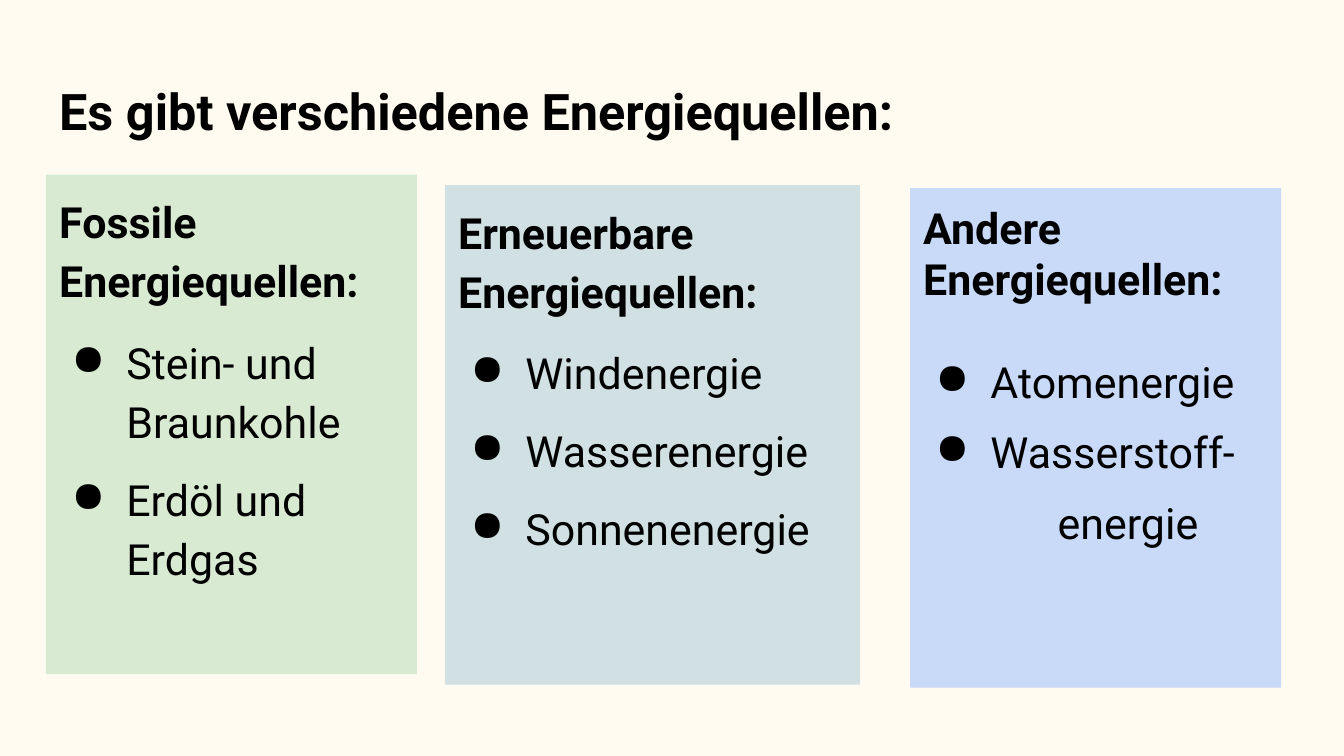
import pptx
import pptx.dml.color
import pptx.enum.shapes
import pptx.enum.text
import pptx.oxml.ns
import pptx.util
from dataclasses import dataclass
from lxml import etree

Pt = pptx.util.Pt
RGB = pptx.dml.color.RGBColor.from_string


@dataclass(frozen=True)
class Theme:
    font: str = "Roboto"
    text: str = "000000"
    background: str = "FFFBF0"
    fossil: str = "D9EAD3"
    renewable: str = "D0E0E3"
    other: str = "C9DAF8"
    title_size: float = 27
    body_size: float = 23
    inset: float = 7.2
    indent: float = 36
    hanging: float = -29.5


class SlideBuilder:
    def __init__(self, slide, theme):
        self.slide = slide
        self.theme = theme
        fill = slide.background.fill
        fill.solid()
        fill.fore_color.rgb = RGB(theme.background)

    def frame(self, sp):
        tf = sp.text_frame
        tf.word_wrap = True
        tf.vertical_anchor = pptx.enum.text.MSO_ANCHOR.TOP
        tf.margin_left = tf.margin_right = Pt(self.theme.inset)
        tf.margin_top = tf.margin_bottom = Pt(self.theme.inset)
        return tf

    def paragraph(self, p, text, size, bold=False, line=1.0, before=0):
        p.text = text
        p.alignment = pptx.enum.text.PP_ALIGN.LEFT
        p.line_spacing = line
        p.space_before = Pt(before)
        p.font.name, p.font.size, p.font.bold = self.theme.font, Pt(size), bold
        p.font.color.rgb = RGB(self.theme.text)

    def indent(self, p, left, first):
        pPr = p._p.get_or_add_pPr()
        pPr.set("marL", str(int(Pt(left))))
        pPr.set("indent", str(int(Pt(first))))
        return pPr

    def bullet(self, p):
        pPr = self.indent(p, self.theme.indent, self.theme.hanging)
        qn = pptx.oxml.ns.qn
        color = etree.Element(qn("a:buClr"))
        etree.SubElement(color, qn("a:srgbClr")).set("val", self.theme.text)
        char = etree.Element(qn("a:buChar"))
        char.set("char", "●")
        defaults = pPr.find(qn("a:defRPr"))
        defaults.addprevious(color)
        defaults.addprevious(char)

    def title(self, text, left, top, width, height):
        sp = self.slide.shapes.add_textbox(Pt(left), Pt(top), Pt(width), Pt(height))
        self.paragraph(self.frame(sp).paragraphs[0], text, self.theme.title_size, bold=True)

    def card(self, heading, items, color, left, top, width, height,
             line=1.15, gap=12, continuation=None):
        sp = self.slide.shapes.add_shape(
            pptx.enum.shapes.MSO_SHAPE.RECTANGLE, Pt(left), Pt(top), Pt(width), Pt(height))
        sp.shadow.inherit = False
        sp.fill.solid()
        sp.fill.fore_color.rgb = RGB(color)
        sp.line.fill.background()
        tf = self.frame(sp)
        size = self.theme.body_size
        self.paragraph(tf.paragraphs[0], heading, size, bold=True, line=line)
        for i, item in enumerate(items):
            p = tf.add_paragraph()
            self.paragraph(p, item, size, line=line, before=10 if i else gap)
            self.bullet(p)
        if continuation:
            p = tf.add_paragraph()
            self.paragraph(p, continuation, size, line=line, before=10)
            self.indent(p, 2 * self.theme.indent, 0)
        p.space_after = Pt(10)


def main():
    prs = pptx.Presentation()
    prs.slide_width, prs.slide_height = Pt(720), Pt(405)
    theme = Theme()
    s = SlideBuilder(prs.slides.add_slide(prs.slide_layouts[6]), theme)
    height = 267.6

    s.title("Es gibt verschiedene Energiequellen:", 24.6, 35.5, 671, 48)
    s.card("Fossile Energiequellen:", ["Stein- und Braunkohle", "Erdöl und Erdgas"],
           theme.fossil, 24.6, 93.6, 198.8, height)
    s.card("Erneuerbare Energiequellen:", ["Windenergie", "Wasserenergie", "Sonnenenergie"],
           theme.renewable, 238.4, 99.2, 222.4, height)
    s.card("Andere Energiequellen:", ["Atomenergie", "Wasserstoff-"],
           theme.other, 487.5, 100.8, 198.8, height,
           line=1.0, gap=27.5, continuation="energie")
    prs.save("out.pptx")


if __name__ == "__main__":
    main()
